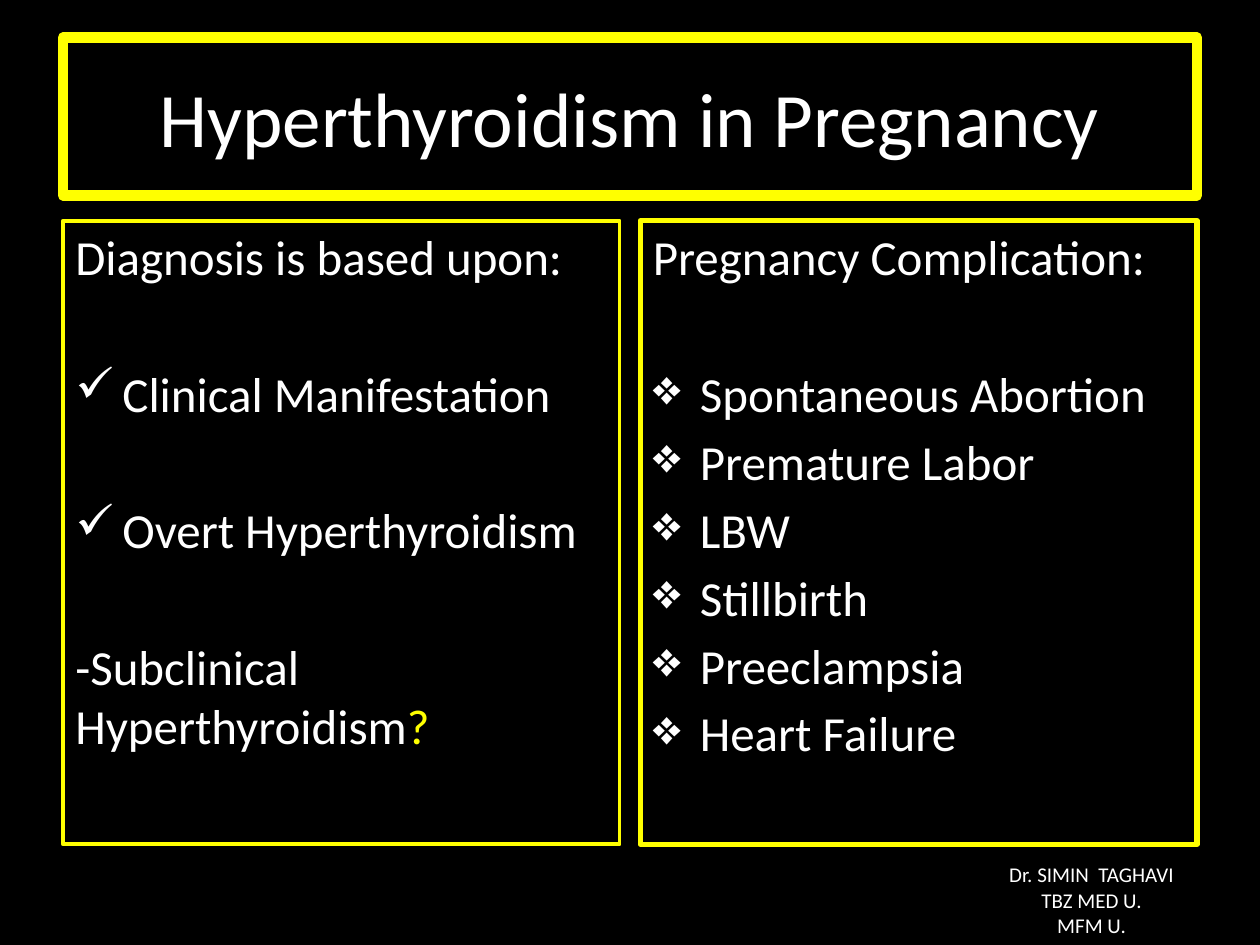
import pptx
import pptx.util
import pptx.dml.color
import pptx.enum.shapes
import pptx.enum.text
from lxml import etree

Cm, Pt = pptx.util.Cm, pptx.util.Pt
ALIGN = pptx.enum.text.PP_ALIGN
ANCHOR = pptx.enum.text.MSO_ANCHOR
BLACK, WHITE, YELLOW = "000000", "FFFFFF", "FFFF00"
STEP, GAP = 5.2, 44.4  # space before a line, and before a line set apart


def tint(color):
    return pptx.dml.color.RGBColor.from_string(color)


def style(para, size, align=ALIGN.LEFT, before=0):
    para.alignment = align
    para.space_before = Pt(before)
    para.font.size = Pt(size)
    para.font.name = "Calibri"
    para.font.color.rgb = tint(WHITE)


def bullet(para, mark):
    props = para._p.get_or_add_pPr()
    props.set("marL", str(Cm(0.95)))
    props.set("indent", str(-Cm(0.95)))
    char = etree.Element(pptx.oxml.ns.qn("a:buChar"), char=mark)
    # The bullet stands before the default run properties
    props.insert_element_before(char, "a:tabLst", "a:defRPr", "a:extLst")


def frame(slide, box, width, anchor):
    shape = slide.shapes.add_shape(
        pptx.enum.shapes.MSO_SHAPE.RECTANGLE, *map(Cm, box))
    shape.shadow.inherit = False
    shape.fill.background()
    shape.line.color.rgb = tint(YELLOW)
    shape.line.width = Pt(width)
    text = shape.text_frame
    text.word_wrap = True
    text.vertical_anchor = anchor
    return text


def title(slide, box, words):
    para = frame(slide, box, 6, ANCHOR.MIDDLE).paragraphs[0]
    para.text = words
    style(para, 44, ALIGN.CENTER)


def panel(slide, box, width, items):
    """Each item is its bullet, its space before and its coloured runs."""
    text = frame(slide, box, width, ANCHOR.TOP)
    for i, (mark, before, runs) in enumerate(items):
        para = text.add_paragraph() if i else text.paragraphs[0]
        style(para, 28, before=before)
        if mark:
            bullet(para, mark)
        for words, color in runs:
            run = para.add_run()
            run.text = words
            run.font.color.rgb = tint(color)


def credit(slide, box, lines):
    text = slide.shapes.add_textbox(*map(Cm, box)).text_frame
    text.word_wrap = True
    for i, words in enumerate(lines):
        para = text.add_paragraph() if i else text.paragraphs[0]
        para.text = words
        style(para, 12, ALIGN.CENTER)


def main():
    deck = pptx.Presentation()
    deck.slide_width, deck.slide_height = Cm(25.4), Cm(19.05)
    slide = deck.slides.add_slide(deck.slide_layouts[6])
    slide.background.fill.solid()
    slide.background.fill.fore_color.rgb = tint(BLACK)

    # Title over two equal panels
    left, wide, gap = 1.27, 22.86, 0.42
    half = (wide - gap) / 2
    top, tall = 4.45, 12.57
    title(slide, (left, 0.76, wide, 3.18), "Hyperthyroidism in Pregnancy")

    # Diagnosis
    signs = ["Clinical Manifestation", "Overt Hyperthyroidism"]
    panel(slide, (left, top, half, tall), 2.25, [
        ("", 0, [("Diagnosis is based upon:", WHITE)]),
        *[("✓", GAP, [(sign, WHITE)]) for sign in signs],
        ("", GAP, [("-Subclinical Hyperthyroidism", WHITE), ("?", YELLOW)]),
    ])

    # Complications
    risks = ["Spontaneous Abortion", "Premature Labor", "LBW",
             "Stillbirth", "Preeclampsia", "Heart Failure"]
    panel(slide, (left + half + gap, top, half, tall), 3, [
        ("", 0, [("Pregnancy Complication:", WHITE)]),
        *[("❖", STEP if i else GAP, [(risk, WHITE)])
          for i, risk in enumerate(risks)],
    ])

    # Author
    credit(slide, (19.25, 17.25, 5.51, 1.8),
           ["Dr. SIMIN  TAGHAVI", "TBZ MED U.", "MFM U."])
    deck.save("out.pptx")


if __name__ == "__main__":
    main()
